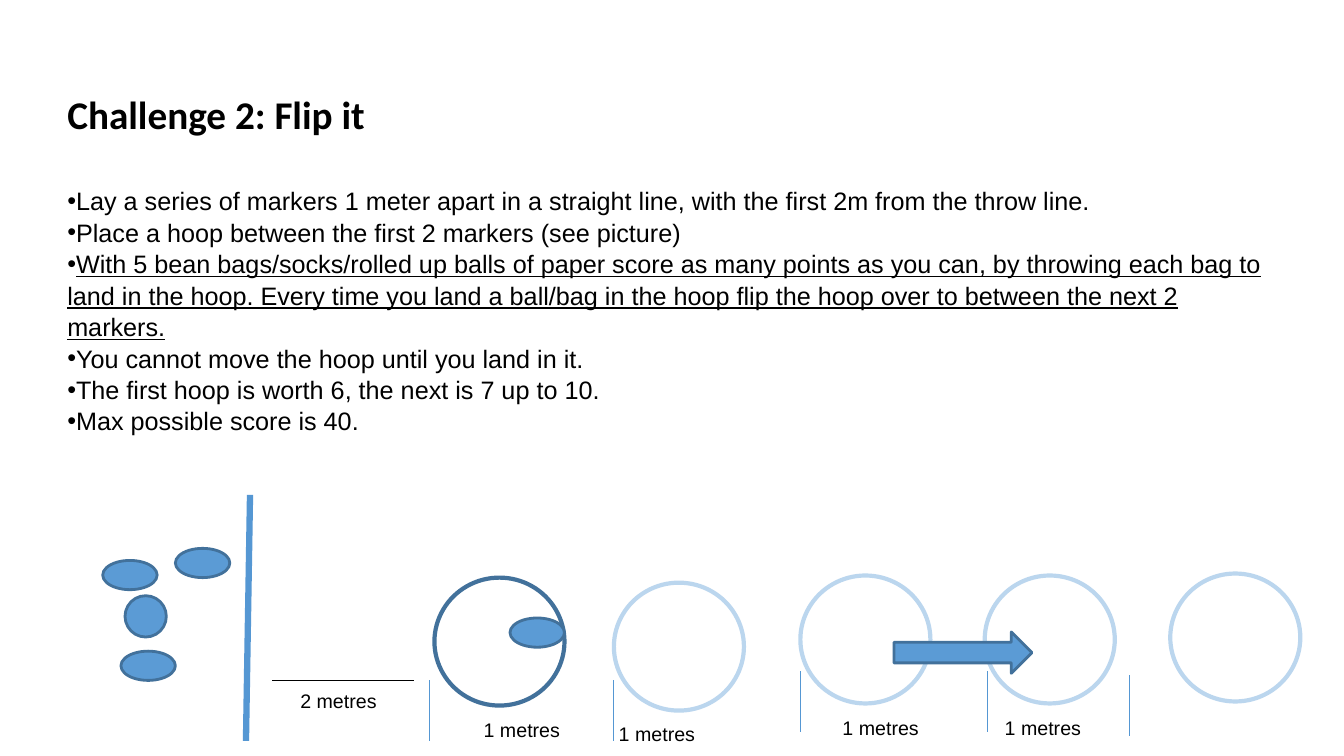
"""Build the "Flip it" throwing challenge slide."""
from lxml.etree import SubElement
from pptx import Presentation
from pptx.dml.color import RGBColor
from pptx.enum.shapes import MSO_CONNECTOR, MSO_SHAPE
from pptx.oxml.ns import qn
from pptx.util import Pt

THEME = {
    "black": "000000", "blue": "5B9BD5", "edge": "42719B",
    "pale": "BBD6EE", "marker": "5597D3",
    "title": 28, "body": 18, "label": 14,
    "title_font": "Calibri", "body_font": "Arial",
}
TITLE = "Challenge 2: Flip it"
RULES = [
    ("Lay a series of markers 1 meter apart in a straight line, with the first 2m from the throw line.", False),
    ("Place a hoop between the first 2 markers (see picture)", False),
    ("With 5 bean bags/socks/rolled up balls of paper score as many points as you can, "
     "by throwing each bag to land in the hoop. Every time you land a ball/bag in the hoop "
     "flip the hoop over to between the next 2 markers.", True),
    ("You cannot move the hoop until you land in it.", False),
    ("The first hoop is worth 6, the next is 7 up to 10.", False),
    ("Max possible score is 40.", False),
]
HOOP_SIZE = (92.9, 91.4)
HOOPS = [(310.3, 412.6, "edge"), (438.5, 416.2, "pale"), (703.4, 411.1, "pale"),
         (571.7, 411.1, "pale"), (835.9, 409.7, "pale")]
BAG_SIZE = (38.9, 20.9)
BAGS = [(125.3, 391.7), (86.4, 465.1), (364.3, 441.4), (73.4, 400.3)]
BALL = (89.3, 425.5, 29.5, 29.5)
ARROW = (638.6, 451.4, 98.6, 29.5)
THROW_LINE = (178.6, 353.5, 175.7, 529.2)
DISTANCE_LINE = (194.4, 486, 295.9, 486)
MARKER_HEIGHT = 43.2
MARKERS = [(306.7, 486), (438.5, 486), (705.6, 479.5), (571.7, 479.5), (807.1, 482.4)]
LABEL_SIZE = (79.2, 24.5)
LABELS = [("2 metres", 207.4, 488.2), ("1 metres", 338.4, 509), ("1 metres", 710.6, 507.6),
          ("1 metres", 594.7, 507.6), ("1 metres", 434.9, 511.9)]

prs = Presentation()
prs.slide_width, prs.slide_height = Pt(960), Pt(540)
s = prs.slides.add_slide(prs.slide_layouts[6])


def color(name):
    return RGBColor.from_string(THEME[name])


def add_text(p, text, size="body", font="body_font", bold=False, underline=False):
    r = p.add_run()
    r.text = text
    r.font.size, r.font.name = Pt(THEME[size]), THEME[font]
    r.font.bold, r.font.underline = bold, underline
    r.font.color.rgb = color("black")


def add_frame(x, y, w, h):
    tf = s.shapes.add_textbox(Pt(x), Pt(y), Pt(w), Pt(h)).text_frame
    tf.word_wrap = True
    return tf


def add_bullet(p):
    pPr = p._p.get_or_add_pPr()
    pPr.set("marL", "0")
    pPr.set("indent", str(-Pt(8.64)))
    clr = SubElement(pPr, qn("a:buClr"))
    SubElement(clr, qn("a:srgbClr"), val=THEME["black"])
    SubElement(pPr, qn("a:buFont"), typeface=THEME["body_font"])
    SubElement(pPr, qn("a:buChar"), char="•")


def add_figure(kind, x, y, w, h, edge="edge", width=2, fill="blue"):
    sp = s.shapes.add_shape(kind, Pt(x), Pt(y), Pt(w), Pt(h))
    sp.shadow.inherit = False
    if fill:
        sp.fill.solid()
        sp.fill.fore_color.rgb = color(fill)
    else:
        sp.fill.background()
    sp.line.color.rgb, sp.line.width = color(edge), Pt(width)


def add_line(x1, y1, x2, y2, edge="marker", width=0.75):
    ln = s.shapes.add_connector(MSO_CONNECTOR.STRAIGHT, Pt(x1), Pt(y1), Pt(x2), Pt(y2))
    ln.line.color.rgb, ln.line.width = color(edge), Pt(width)
    SubElement(ln._element.spPr, qn("a:effectLst"))


for x, y, edge in HOOPS:
    add_figure(MSO_SHAPE.OVAL, x, y, *HOOP_SIZE, edge=edge, width=3, fill=None)
add_figure(MSO_SHAPE.RIGHT_ARROW, *ARROW)
for x, y in BAGS:
    add_figure(MSO_SHAPE.OVAL, x, y, *BAG_SIZE)
add_figure(MSO_SHAPE.OVAL, *BALL)

add_line(*THROW_LINE, width=4.5)
add_line(*DISTANCE_LINE, edge="black")
for x, y in MARKERS:
    add_line(x, y, x, y + MARKER_HEIGHT)

tf = add_frame(41, 59.8, 872.6, 271.4)
p = tf.paragraphs[0]
p.line_spacing, p.space_after = 1.04, Pt(33.5)
add_text(p, TITLE, size="title", font="title_font", bold=True)
for rule, underline in RULES:
    p = tf.add_paragraph()
    p.line_spacing = 1.04
    add_bullet(p)
    add_text(p, rule, underline=underline)

for text, x, y in LABELS:
    add_text(add_frame(x, y, *LABEL_SIZE).paragraphs[0], text, size="label")

prs.save("out.pptx")
